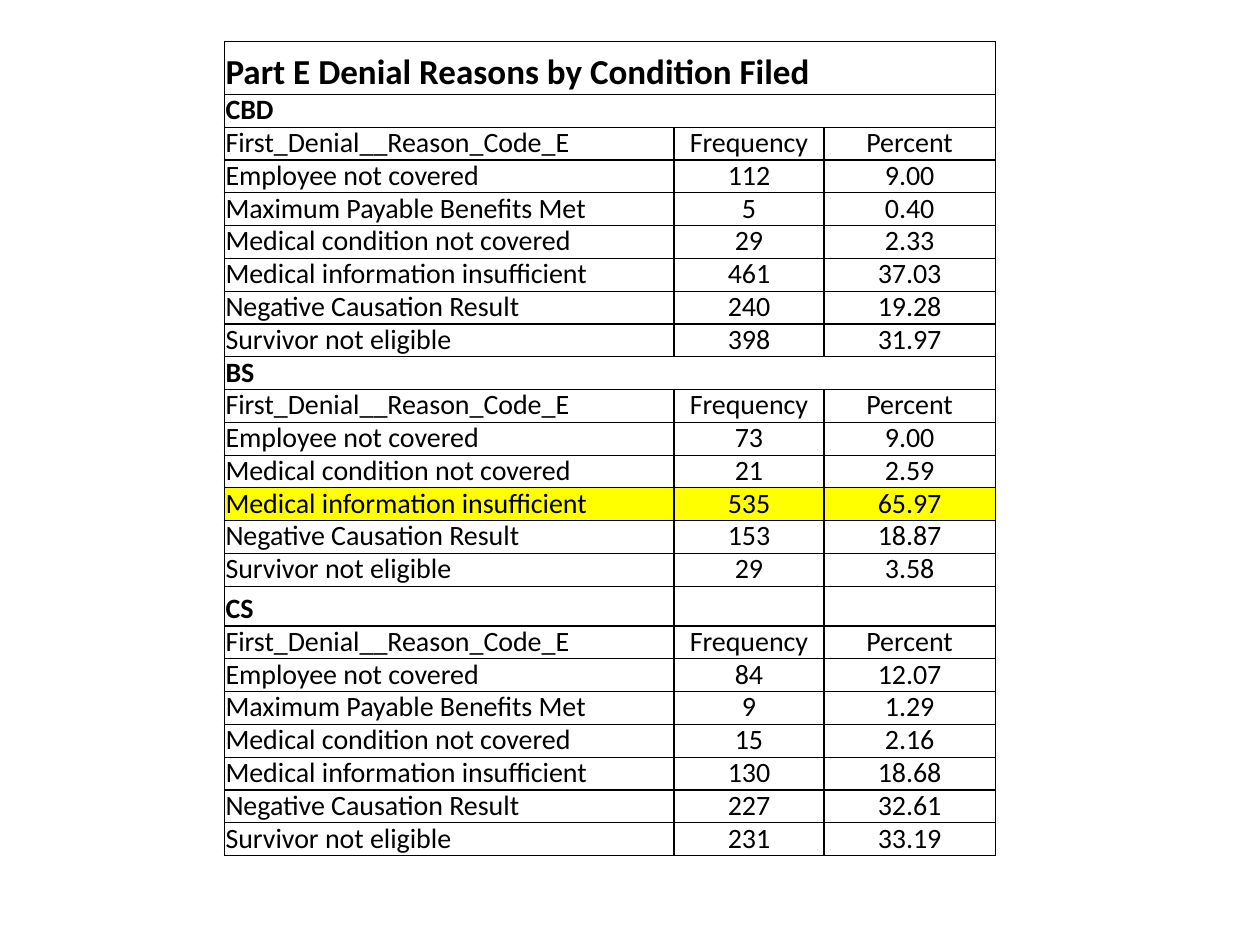
from dataclasses import dataclass

from lxml import etree
from pptx import Presentation
from pptx import util as u
from pptx.dml.color import RGBColor
from pptx.enum import text
from pptx.oxml import ns


@dataclass(frozen=True)
class Theme:
    """Colours, font and type sizes of the slide."""

    ink: str = "000000"
    highlight: str = "FFFF00"
    font: str = "Calibri"
    title_size: int = 20
    body_size: int = 16
    title_leading: int = 16
    body_leading: int = 18
    border: float = 0.75


THEME = Theme()
SLIDE_WIDTH, SLIDE_HEIGHT = u.Inches(10), u.Inches(7.5)
TITLE = "Part E Denial Reasons by Condition Filed"
HEADER = ("First_Denial__Reason_Code_E", "Frequency", "Percent")
REASONS = {
    "employee": "Employee not covered",
    "maximum": "Maximum Payable Benefits Met",
    "condition": "Medical condition not covered",
    "information": "Medical information insufficient",
    "causation": "Negative Causation Result",
    "survivor": "Survivor not eligible",
}
CONDITIONS = {
    "CBD": {
        "employee": ("112", "9.00"),
        "maximum": ("5", "0.40"),
        "condition": ("29", "2.33"),
        "information": ("461", "37.03"),
        "causation": ("240", "19.28"),
        "survivor": ("398", "31.97"),
    },
    "BS": {
        "employee": ("73", "9.00"),
        "condition": ("21", "2.59"),
        "information": ("535", "65.97"),
        "causation": ("153", "18.87"),
        "survivor": ("29", "3.58"),
    },
    "CS": {
        "employee": ("84", "12.07"),
        "maximum": ("9", "1.29"),
        "condition": ("15", "2.16"),
        "information": ("130", "18.68"),
        "causation": ("227", "32.61"),
        "survivor": ("231", "33.19"),
    },
}
HIGHLIGHTED = ("BS", "information")
UNMERGED = "CS"
COLUMN_SHARES = (3.57, 1.19, 1.36)
TITLE_ROW, UNMERGED_ROW = u.Inches(0.42), u.Inches(0.28)


def set_format(target, values):
    """Set each named attribute on the target."""
    for name, value in values.items():
        setattr(target, name, value)


def add_borders(cell):
    """Draw a thin solid line on all four sides of a cell."""
    properties = cell._tc.get_or_add_tcPr()
    for side in ("lnL", "lnR", "lnT", "lnB"):
        line = etree.SubElement(properties, ns.qn(f"a:{side}"), w=str(u.Pt(THEME.border)))
        fill = etree.SubElement(line, ns.qn("a:solidFill"))
        etree.SubElement(fill, ns.qn("a:srgbClr"), val=THEME.ink)


def fill_cell(cell, wording, size, leading, bold=False, centred=False, highlighted=False):
    """Write and format one table cell."""
    inset = u.Inches(0.01)
    set_format(cell, {
        "margin_left": inset, "margin_right": inset, "margin_top": inset,
        "margin_bottom": 0, "vertical_anchor": text.MSO_ANCHOR.BOTTOM,
    })
    add_borders(cell)
    if highlighted:
        cell.fill.solid()
        cell.fill.fore_color.rgb = RGBColor.from_string(THEME.highlight)
    else:
        cell.fill.background()
    paragraph = cell.text_frame.paragraphs[0]
    set_format(paragraph, {
        "line_spacing": u.Pt(leading),
        "alignment": text.PP_ALIGN.CENTER if centred else text.PP_ALIGN.LEFT,
    })
    if wording:
        run = paragraph.add_run()
        run.text = wording
        set_format(run.font, {"name": THEME.font, "size": u.Pt(size), "bold": bold})
        run.font.color.rgb = RGBColor.from_string(THEME.ink)


def list_rows():
    """Return each row as its wording and whether it is bold, merged or highlighted."""
    rows = [((TITLE, "", ""), True, True, False)]
    for condition, counts in CONDITIONS.items():
        rows.append(((condition, "", ""), True, condition != UNMERGED, False))
        rows.append((HEADER, False, False, False))
        for reason, values in counts.items():
            highlighted = (condition, reason) == HIGHLIGHTED
            rows.append(((REASONS[reason], *values), False, False, highlighted))
    return rows


def add_denial_table(slide, left, top, width, height):
    """Place the denial table in the given box."""
    rows = list_rows()
    frame = slide.shapes.add_table(len(rows), len(COLUMN_SHARES), left, top, width, height)
    table = frame.table
    set_format(table, {"first_row": False, "horz_banding": False})
    for column, share in zip(table.columns, COLUMN_SHARES):
        column.width = int(width * share / sum(COLUMN_SHARES))
    body_row = (height - TITLE_ROW - UNMERGED_ROW) // (len(rows) - 2)
    for index, (wordings, bold, merged, highlighted) in enumerate(rows):
        is_title = index == 0
        row = table.rows[index]
        row.height = TITLE_ROW if is_title else UNMERGED_ROW if bold and not merged else body_row
        size = THEME.title_size if is_title else THEME.body_size
        leading = THEME.title_leading if is_title else THEME.body_leading
        for position, (cell, wording) in enumerate(zip(row.cells, wordings)):
            fill_cell(cell, wording, size, leading, bold, position > 0, highlighted)
        if merged:
            table.cell(index, 0).merge(table.cell(index, len(COLUMN_SHARES) - 1))


def main():
    """Build the presentation and save it."""
    presentation = Presentation()
    set_format(presentation, {"slide_width": SLIDE_WIDTH, "slide_height": SLIDE_HEIGHT})
    slide = presentation.slides.add_slide(presentation.slide_layouts[6])
    add_denial_table(
        slide,
        left=u.Inches(1.78),
        top=u.Inches(0.33),
        width=u.Inches(6.12),
        height=u.Inches(6.28),
    )
    presentation.save("out.pptx")


if __name__ == "__main__":
    main()
